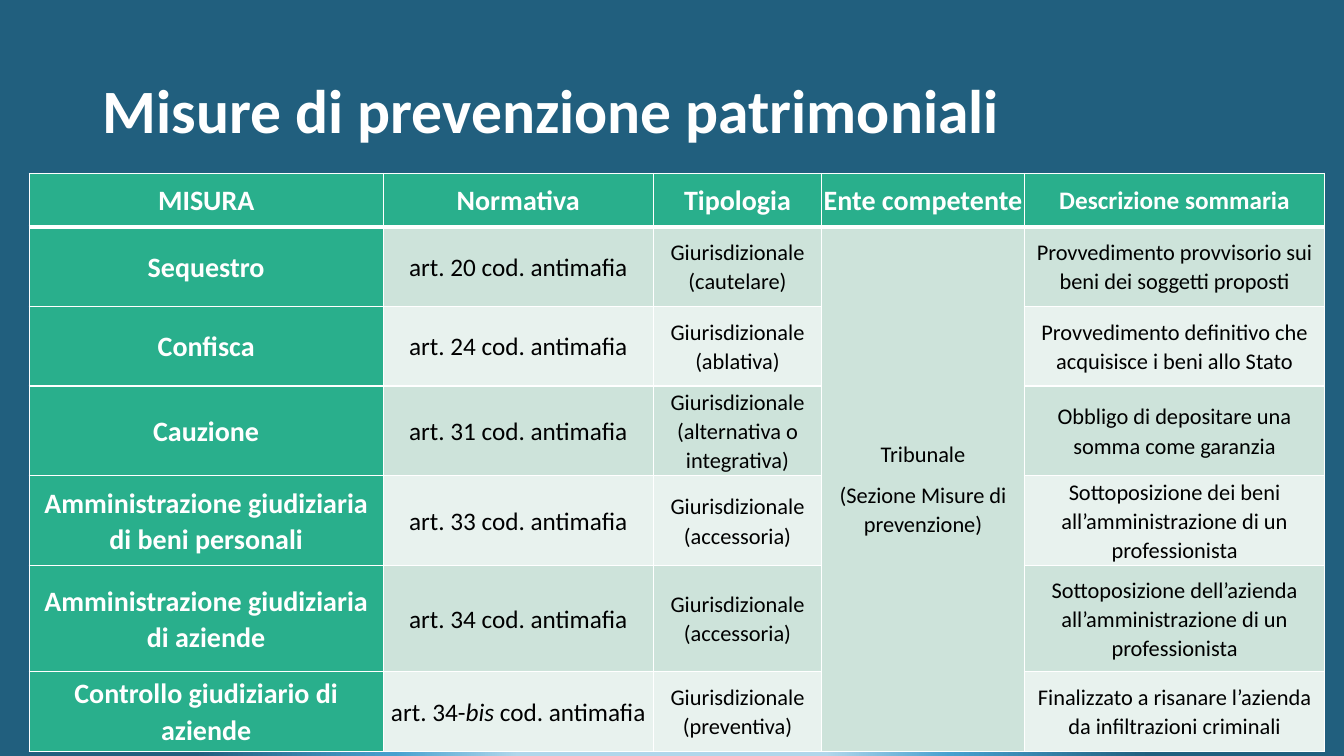
from dataclasses import dataclass

from lxml.etree import SubElement
from pptx import Presentation
from pptx.dml.color import RGBColor
from pptx.enum.text import MSO_ANCHOR, MSO_AUTO_SIZE, PP_ALIGN
from pptx.oxml import parse_xml
from pptx.oxml.ns import nsdecls, qn
from pptx.util import Inches, Pt


@dataclass(frozen=True)
class Theme:
    font: str = "Calibri"
    white: str = "FFFFFF"
    black: str = "000000"
    green: str = "29AF8C"
    bands: tuple = ("CDE3DA", "E8F2EE")
    glow: tuple = ((20, "B1D7EB"), (36, "47A1CF"), (62, "215F7E"))
    title_size: int = 44
    label_size: int = 20
    law_size: int = 18
    detail_size: int = 16
    thin_border: int = 1
    header_border: int = 3


THEME = Theme()

COLUMN_WIDTHS = (3.51, 2.68, 1.67, 2.01, 2.98)
ROW_HEIGHTS = (0.53, 0.79, 0.79, 0.84, 0.84, 1.05, 0.79)
AUTHORITY_COLUMN = 3
AUTHORITY = "Tribunale\n(Sezione Misure di prevenzione)"

# Asterisks enclose italic words
HEADERS = ("MISURA", "Normativa", "Tipologia", "Ente competente", "Descrizione sommaria")
MEASURES = (
    ("Sequestro", "art. 20 cod. antimafia", "Giurisdizionale (cautelare)", AUTHORITY,
     "Provvedimento provvisorio sui beni dei soggetti proposti"),
    ("Confisca", "art. 24 cod. antimafia", "Giurisdizionale (ablativa)", "",
     "Provvedimento definitivo che acquisisce i beni allo Stato"),
    ("Cauzione", "art. 31 cod. antimafia", "Giurisdizionale (alternativa o integrativa)", "",
     "Obbligo di depositare una somma come garanzia"),
    ("Amministrazione giudiziaria di beni personali", "art. 33 cod. antimafia",
     "Giurisdizionale (accessoria)", "",
     "Sottoposizione dei beni all’amministrazione di un professionista"),
    ("Amministrazione giudiziaria di aziende", "art. 34 cod. antimafia",
     "Giurisdizionale (accessoria)", "",
     "Sottoposizione dell’azienda all’amministrazione di un professionista"),
    ("Controllo giudiziario di aziende", "art. 34-*bis* cod. antimafia",
     "Giurisdizionale (preventiva)", "",
     "Finalizzato a risanare l’azienda da infiltrazioni criminali"),
)


def set_font(font, size, color, bold):
    font.name = THEME.font
    font.size = Pt(size)
    font.bold = bold
    font.color.rgb = RGBColor.from_string(color)


def paint_background(slide):
    """Radial glow centred below the slide."""
    slide.background.fill.gradient()
    gradient = slide.element.find(".//" + qn("a:gradFill"))
    stops = "".join(
        f'<a:gs pos="{share * 1000}"><a:srgbClr val="{color}"/></a:gs>'
        for share, color in THEME.glow
    )
    gradient.getparent().replace(gradient, parse_xml(
        f'<a:gradFill {nsdecls("a")} rotWithShape="1"><a:gsLst>{stops}</a:gsLst>'
        '<a:path path="circle">'
        '<a:fillToRect l="50000" t="130000" r="50000" b="-30000"/></a:path></a:gradFill>'
    ))


def add_title(slide, text, left, top, width, height):
    title = slide.shapes.title
    title.left, title.top, title.width, title.height = map(Inches, (left, top, width, height))
    frame = title.text_frame
    frame.text = text
    frame.auto_size = MSO_AUTO_SIZE.NONE
    frame.vertical_anchor = MSO_ANCHOR.MIDDLE
    paragraph = frame.paragraphs[0]
    paragraph.alignment = PP_ALIGN.LEFT
    paragraph.line_spacing = 0.9
    set_font(paragraph.font, THEME.title_size, THEME.white, True)


def set_borders(cell, row):
    widths = {side: THEME.thin_border for side in ("lnL", "lnR", "lnT", "lnB")}
    if row == 0:
        widths["lnB"] = THEME.header_border
    elif row == 1:
        widths["lnT"] = THEME.header_border
    properties = cell._tc.get_or_add_tcPr()
    for side, width in widths.items():
        line = SubElement(properties, qn(f"a:{side}"), w=str(Pt(width)))
        fill = SubElement(line, qn("a:solidFill"))
        SubElement(fill, qn("a:srgbClr"), val=THEME.white)


def cell_style(row, column):
    """Return fill, text colour, type size and weight of a cell."""
    if row == 0:
        last = column == len(HEADERS) - 1
        return THEME.green, THEME.white, THEME.law_size if last else THEME.label_size, True
    if column == 0:
        return THEME.green, THEME.white, THEME.label_size, True
    size = THEME.law_size if column == 1 else THEME.detail_size
    return THEME.bands[(row - 1) % 2], THEME.black, size, False


def write_cell(cell, text, row, column):
    fill, color, size, bold = cell_style(row, column)
    set_borders(cell, row)
    cell.fill.solid()
    cell.fill.fore_color.rgb = RGBColor.from_string(fill)
    cell.vertical_anchor = MSO_ANCHOR.MIDDLE
    cell.margin_left = cell.margin_right = Inches(0.01)
    cell.margin_top = cell.margin_bottom = Inches(0.01)
    cell.text = text.replace("*", "") if "*" not in text else ""
    if "*" in text:
        for index, part in enumerate(text.split("*")):
            run = cell.text_frame.paragraphs[0].add_run()
            run.text = part
            run.font.italic = index % 2 == 1
    for paragraph in cell.text_frame.paragraphs:
        paragraph.alignment = PP_ALIGN.CENTER
        paragraph.line_spacing = 1.07
        paragraph.space_after = Pt(8)
        set_font(paragraph.font, size, color, bold)


def add_measures_table(slide, left, top):
    rows = (HEADERS,) + MEASURES
    frame = slide.shapes.add_table(
        len(rows), len(HEADERS), Inches(left), Inches(top),
        Inches(sum(COLUMN_WIDTHS)), Inches(sum(ROW_HEIGHTS)))
    table = frame.table
    for column, width in zip(table.columns, COLUMN_WIDTHS):
        column.width = Inches(width)
    for row, height in zip(table.rows, ROW_HEIGHTS):
        row.height = Inches(height)
    for row, texts in enumerate(rows):
        for column, text in enumerate(texts):
            write_cell(table.cell(row, column), text, row, column)
    # One authority serves every measure
    table.cell(1, AUTHORITY_COLUMN).merge(table.cell(len(MEASURES), AUTHORITY_COLUMN))


def main():
    presentation = Presentation()
    presentation.slide_width = Inches(13.33)
    presentation.slide_height = Inches(7.5)
    slide = presentation.slides.add_slide(presentation.slide_layouts[5])
    paint_background(slide)
    add_title(slide, "Misure di prevenzione patrimoniali", 0.92, 0.4, 11.5, 1.45)
    add_measures_table(slide, 0.29, 1.72)
    presentation.save("out.pptx")


if __name__ == "__main__":
    main()
